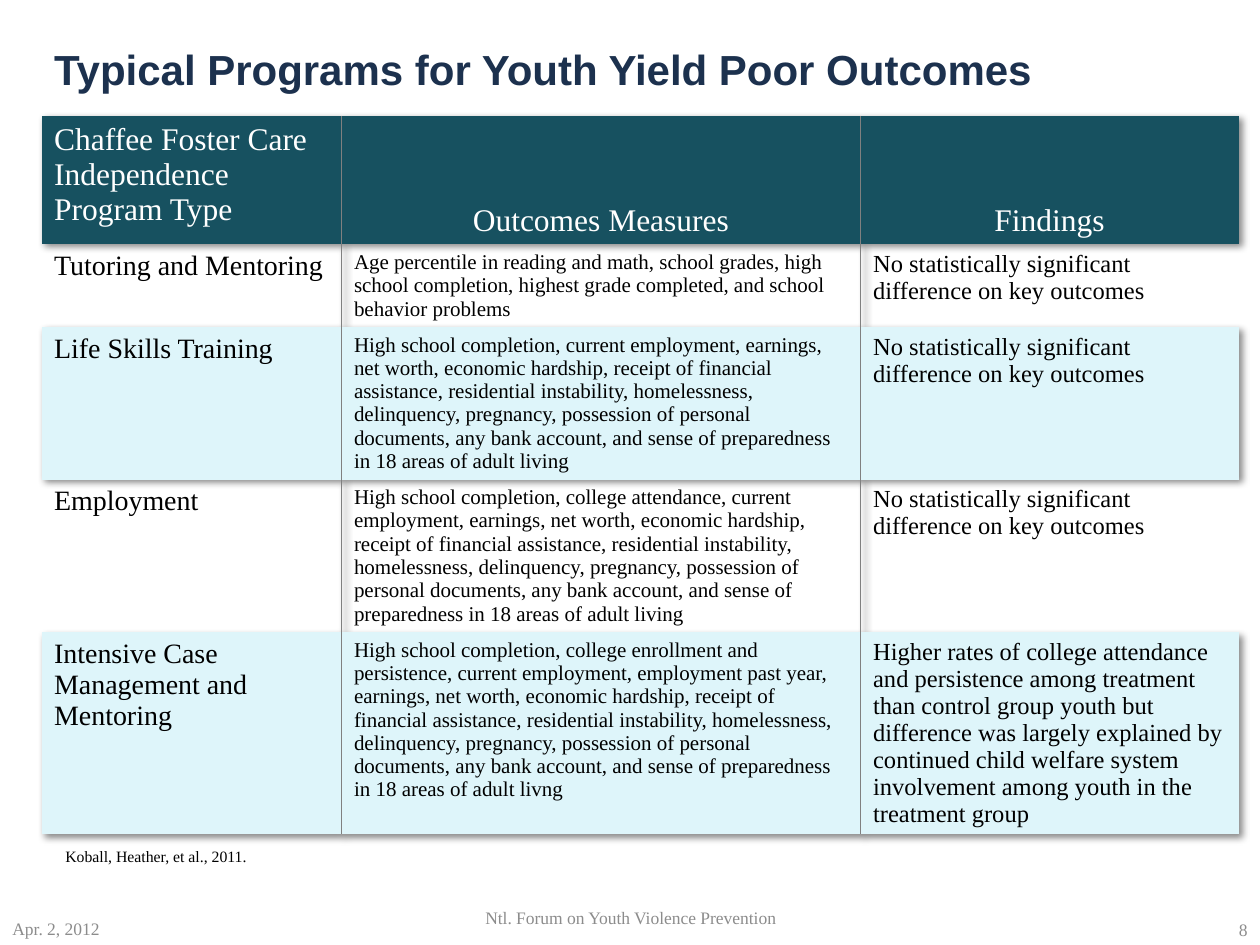
from dataclasses import dataclass

from lxml.etree import SubElement
from pptx import Presentation
from pptx.dml.color import RGBColor
from pptx.enum.text import MSO_ANCHOR as Anchor, PP_ALIGN as Align
from pptx.oxml import parse_xml
from pptx.oxml.ns import nsdecls, qn
from pptx.util import Inches, Pt


@dataclass(frozen=True)
class Theme:
    heading_font: str = "Arial"
    body_font: str = "Times New Roman"
    navy: str = "1C314E"
    teal: str = "175160"
    pale: str = "DEF5FA"
    rule: str = "808080"
    grey: str = "8C8C8C"
    white: str = "FFFFFF"
    black: str = "000000"
    title_size: int = 24
    header_size: int = 18
    column_sizes: tuple = (16, 12, 14)
    footer_size: int = 10
    source_size: int = 9


THEME = Theme()
PLAIN_TABLE_STYLE = "{2D5ABB26-0587-4C30-8999-92F81FD0307C}"
COLUMN_WIDTHS = (2.38, 4.12, 3)
ROW_HEIGHTS = (1.02, 0.65, 1.21, 1.21, 1.6)

NO_DIFFERENCE = "No statistically significant difference on key outcomes"
ROWS = (
    ("Chaffee Foster Care Independence Program Type", "Outcomes Measures", "Findings"),
    ("Tutoring and Mentoring",
     "Age percentile in reading and math, school grades, high school completion, "
     "highest grade completed, and school behavior problems",
     NO_DIFFERENCE),
    ("Life Skills Training",
     "High school completion, current employment, earnings, net worth, economic "
     "hardship, receipt of financial assistance, residential instability, "
     "homelessness, delinquency, pregnancy, possession of personal documents, any "
     "bank account, and sense of preparedness in 18 areas of adult living",
     NO_DIFFERENCE),
    ("Employment",
     "High school completion, college attendance, current employment, earnings, net "
     "worth, economic hardship, receipt of financial assistance, residential "
     "instability, homelessness, delinquency, pregnancy, possession of personal "
     "documents, any bank account, and sense of preparedness in 18 areas of adult living",
     NO_DIFFERENCE),
    ("Intensive Case Management and Mentoring",
     "High school completion, college enrollment and persistence, current employment, "
     "employment past year, earnings, net worth, economic hardship, receipt of "
     "financial assistance, residential instability, homelessness, delinquency, "
     "pregnancy, possession of personal documents, any bank account, and sense of "
     "preparedness in 18 areas of adult livng",
     "Higher rates of college attendance and persistence among treatment than control "
     "group youth but difference was largely explained by continued child welfare "
     "system involvement among youth in the treatment group"),
)


def write_text(text_frame, text, size, color, font=THEME.body_font,
               align=Align.LEFT, bold=False):
    text_frame.text = text
    paragraph = text_frame.paragraphs[0]
    paragraph.alignment = align
    run_font = paragraph.runs[0].font
    run_font.name, run_font.size, run_font.bold = font, Pt(size), bold
    run_font.color.rgb = RGBColor.from_string(color)


def add_title(slide, text):
    title = slide.shapes.title
    title.left, title.top = Inches(0.33), Inches(0.17)
    title.width, title.height = Inches(9.42), Inches(0.75)
    title.text_frame.vertical_anchor = Anchor.MIDDLE
    write_text(title.text_frame, text, THEME.title_size, THEME.navy,
               THEME.heading_font, bold=True)


def add_text(slide, text, box, size, color, align=Align.LEFT, anchor=Anchor.MIDDLE):
    text_box = slide.shapes.add_textbox(*map(Inches, box))
    text_box.text_frame.word_wrap = True
    text_box.text_frame.vertical_anchor = anchor
    write_text(text_box.text_frame, text, size, color, align=align)


def add_side_border(cell, side):
    line = SubElement(cell._tc.get_or_add_tcPr(), qn(f"a:{side}"), w=str(Pt(1)))
    fill = SubElement(line, qn("a:solidFill"))
    SubElement(fill, qn("a:srgbClr"), val=THEME.rule)


def add_table_shadow(table):
    shadow = parse_xml(
        f'<a:effectLst {nsdecls("a")}>'
        '<a:outerShdw blurRad="50800" dist="38100" dir="2700000">'
        '<a:srgbClr val="000000"><a:alpha val="45000"/></a:srgbClr>'
        '</a:outerShdw></a:effectLst>')
    table._tbl.tblPr.insert(0, shadow)


def format_cell(cell, text, row, column):
    is_header = row == 0
    # Borders come before the fill in the cell properties
    if column > 0:
        add_side_border(cell, "lnL")
    if column < len(COLUMN_WIDTHS) - 1:
        add_side_border(cell, "lnR")
    if is_header or row % 2 == 0:
        cell.fill.solid()
        cell.fill.fore_color.rgb = RGBColor.from_string(
            THEME.teal if is_header else THEME.pale)
    else:
        cell.fill.background()
    centred = is_header and column > 0
    cell.vertical_anchor = Anchor.BOTTOM if centred else Anchor.TOP
    write_text(cell.text_frame, text,
               THEME.header_size if is_header else THEME.column_sizes[column],
               THEME.white if is_header else THEME.black,
               align=Align.CENTER if centred else Align.LEFT)


def add_outcomes_table(slide):
    table = slide.shapes.add_table(
        len(ROWS), len(COLUMN_WIDTHS), Inches(0.33), Inches(0.92),
        Inches(sum(COLUMN_WIDTHS)), Inches(sum(ROW_HEIGHTS))).table
    table.first_row = table.horz_banding = False
    table._tbl.tblPr.find(qn("a:tableStyleId")).text = PLAIN_TABLE_STYLE
    add_table_shadow(table)
    for column, width in zip(table.columns, COLUMN_WIDTHS):
        column.width = Inches(width)
    for row, height in zip(table.rows, ROW_HEIGHTS):
        row.height = Inches(height)
    for row, texts in enumerate(ROWS):
        for column, text in enumerate(texts):
            format_cell(table.cell(row, column), text, row, column)


def main():
    presentation = Presentation()
    presentation.slide_width, presentation.slide_height = Inches(10), Inches(7.5)
    slide = presentation.slides.add_slide(presentation.slide_layouts[5])

    # Title and table
    add_title(slide, "Typical Programs for Youth Yield Poor Outcomes")
    add_outcomes_table(slide)

    # Source line
    add_text(slide, "Koball, Heather, et al., 2011.", (0.42, 6.67, 9.42, 0.25),
             THEME.source_size, THEME.black, anchor=Anchor.TOP)

    # Footer: date, event, page number
    for text, box, align in (
        ("Apr. 2, 2012", (0, 7.17, 2.33, 0.4), Align.LEFT),
        ("Ntl. Forum on Youth Violence Prevention", (3.42, 7.08, 3.17, 0.4), Align.CENTER),
        ("8", (7.67, 7.18, 2.33, 0.4), Align.RIGHT),
    ):
        add_text(slide, text, box, THEME.footer_size, THEME.grey, align)

    presentation.save("out.pptx")


if __name__ == "__main__":
    main()
